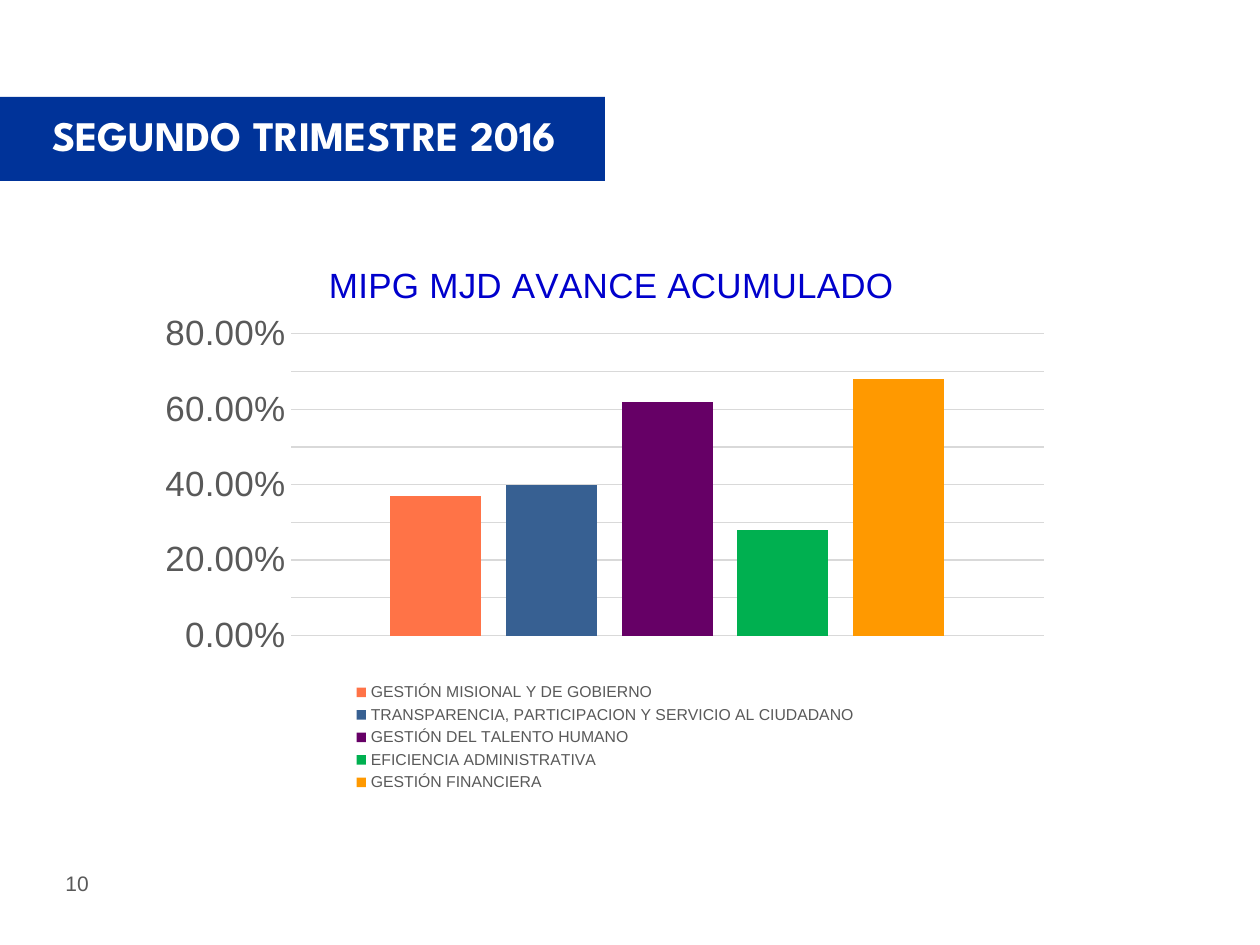
"""Build the slide with the accumulated progress chart for the second quarter of 2016."""
import pptx
import pptx.chart.data
import pptx.dml.color
import pptx.enum.chart
import pptx.enum.shapes
import pptx.enum.text
import pptx.oxml
import pptx.oxml.ns
import pptx.util

PX = 914400 // 126
SLIDE = (1260, 945)
BANNER = (0, 97, 605, 84)
HEADING = ("SEGUNDO TRIMESTRE 2016", (32, 105, 545, 60), "League Spartan", 24, "FFFFFF", True)
PAGE = ("10", (53, 864, 95, 38), "Arial", 12, "595959", False)
CHART = (147, 233, 915, 564)
PLOT = (291, 334, 753, 302)
LEGEND = (350, 679, 510, 117)
TITLE = (323, 256)
CHART_TITLE = "MIPG MJD AVANCE ACUMULADO"
SERIES = [
    ("GESTIÓN MISIONAL Y DE GOBIERNO", 0.37, "FF7347"),
    ("TRANSPARENCIA, PARTICIPACION Y SERVICIO AL CIUDADANO", 0.4, "376092"),
    ("GESTIÓN DEL TALENTO HUMANO", 0.62, "660066"),
    ("EFICIENCIA ADMINISTRATIVA", 0.28, "00B050"),
    ("GESTIÓN FINANCIERA", 0.68, "FF9900"),
]


def emu(box):
    return [value * PX for value in box]


def color(text):
    return pptx.dml.color.RGBColor.from_string(text)


def set_font(font, name, size, shade, bold=False):
    font.name, font.size, font.bold = name, pptx.util.Pt(size), bold
    font.color.rgb = color(shade)


def add_text(slide, text, box, name, size, shade, bold):
    frame = slide.shapes.add_textbox(*emu(box)).text_frame
    frame.word_wrap = True
    frame.vertical_anchor = pptx.enum.text.MSO_ANCHOR.MIDDLE
    paragraph = frame.paragraphs[0]
    paragraph.text = text
    if bold:
        paragraph.alignment = pptx.enum.text.PP_ALIGN.CENTER
    set_font(paragraph.runs[0].font, name, size, shade, bold)


def place(parent, box, index, inner=False):
    """Give a chart part a manual layout as fractions of the chart area."""
    for layout in parent.findall(pptx.oxml.ns.qn("c:layout")):
        parent.remove(layout)
    left, top, width, height = CHART
    fractions = [(box[0] - left) / width, (box[1] - top) / height]
    fractions += [size / whole for size, whole in zip(box[2:], (width, height))]
    target = '<c:layoutTarget val="inner"/>' if inner else ""
    modes = '<c:xMode val="edge"/><c:yMode val="edge"/>'
    values = "".join(f'<c:{tag} val="{part:.3f}"/>' for tag, part in zip("xywh", fractions))
    parent.insert(index, pptx.oxml.parse_xml(
        f'<c:layout {pptx.oxml.ns.nsdecls("c")}><c:manualLayout>'
        f"{target}{modes}{values}</c:manualLayout></c:layout>"))


def add_chart(slide):
    data = pptx.chart.data.CategoryChartData(number_format="0.00%")
    data.categories = ["1"]
    for name, value, _ in SERIES:
        data.add_series(name, [value])
    kind = pptx.enum.chart.XL_CHART_TYPE.COLUMN_CLUSTERED
    chart = slide.shapes.add_chart(kind, *emu(CHART), data).chart
    set_font(chart.font, "Arial", 10, "000000")

    title = chart.chart_title
    title.text_frame.text = CHART_TITLE
    set_font(title.text_frame.paragraphs[0].runs[0].font, "Arial", 20, "0000CC")
    title.include_in_layout = False

    plot = chart.plots[0]
    plot.gap_width, plot.overlap, plot.vary_by_categories = 219, -27, False
    for series, (_, _, shade) in zip(plot.series, SERIES):
        series.format.fill.solid()
        series.format.fill.fore_color.rgb = color(shade)

    chart.category_axis.visible = False
    axis = chart.value_axis
    axis.minimum_scale, axis.maximum_scale, axis.major_unit = 0, 0.8, 0.1
    axis.major_tick_mark = axis.minor_tick_mark = pptx.enum.chart.XL_TICK_MARK.NONE
    axis.tick_labels.number_format = "0.00%"
    axis.tick_labels.number_format_is_linked = False
    set_font(axis.tick_labels.font, "Arial", 20, "595959")
    axis.format.line.fill.background()
    grid = axis.major_gridlines.format.line
    grid.color.rgb, grid.width = color("D9D9D9"), pptx.util.Pt(0.75)

    chart.has_legend = True
    legend = chart.legend
    legend.position = pptx.enum.chart.XL_LEGEND_POSITION.BOTTOM
    legend.include_in_layout = False
    set_font(legend.font, "Arial", 9, "595959")

    area = chart.element.chart
    place(area.find(pptx.oxml.ns.qn("c:title")), TITLE, 1)
    place(area.plotArea, PLOT, 0, inner=True)
    place(area.find(pptx.oxml.ns.qn("c:legend")), LEGEND, 1)


def main():
    presentation = pptx.Presentation()
    presentation.slide_width, presentation.slide_height = emu(SLIDE)
    slide = presentation.slides.add_slide(presentation.slide_layouts[6])
    banner = slide.shapes.add_shape(pptx.enum.shapes.MSO_SHAPE.RECTANGLE, *emu(BANNER))
    banner.shadow.inherit = False
    banner.fill.solid()
    banner.fill.fore_color.rgb = color("003399")
    banner.line.fill.background()
    for label in (PAGE, HEADING):
        add_text(slide, *label)
    add_chart(slide)
    presentation.save("out.pptx")


if __name__ == "__main__":
    main()
